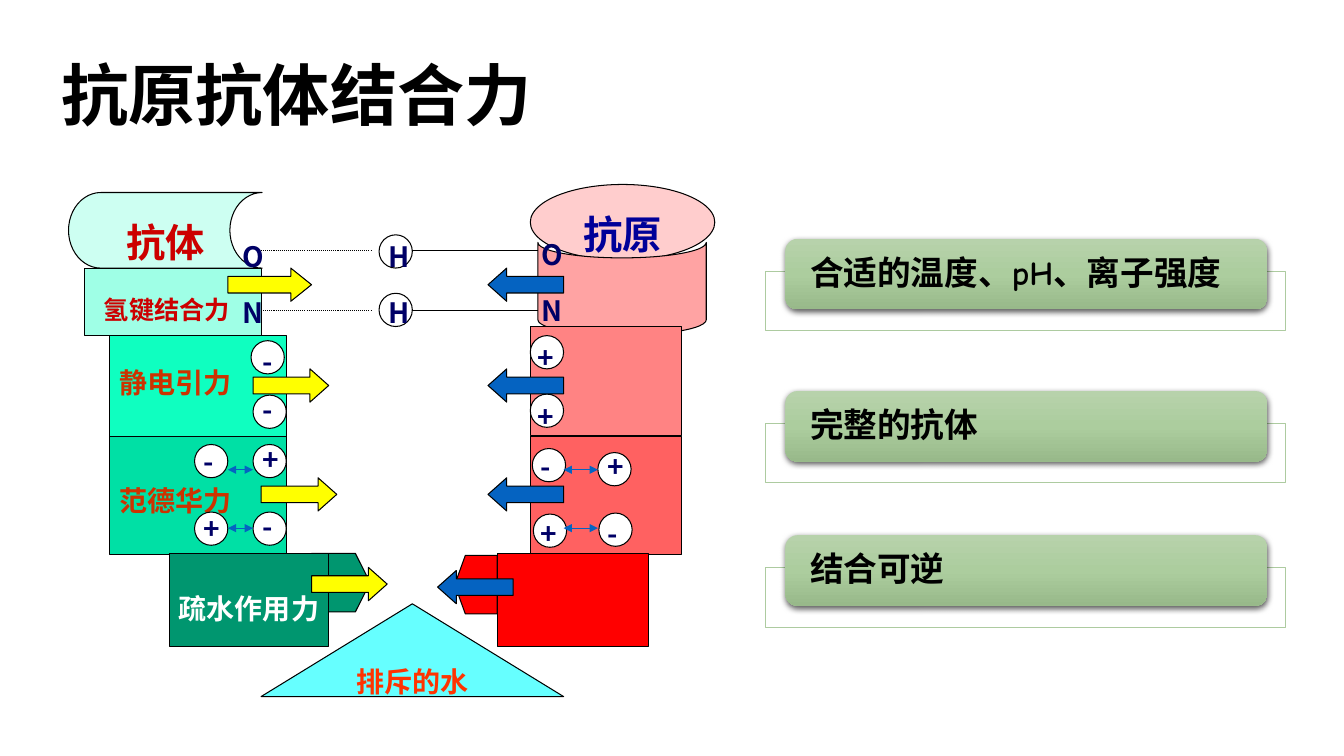
"""Build the slide on the binding forces between antigen and antibody."""
from dataclasses import dataclass

from pptx import Presentation
from pptx.dml.color import RGBColor
from pptx.enum.dml import MSO_LINE
from pptx.enum.shapes import MSO_CONNECTOR, MSO_SHAPE
from pptx.enum.text import MSO_ANCHOR, MSO_AUTO_SIZE, PP_ALIGN
from pptx.oxml import parse_xml
from pptx.oxml.ns import nsdecls, qn
from pptx.util import Emu, Pt


@dataclass(frozen=True)
class Theme:
    cjk: str = "Noto Sans CJK SC"
    title_font: str = "Arial"
    card_font: str = "Comic Neue"
    title_size: int = 48
    name_size: int = 28
    card_size: int = 24
    label_size: int = 20
    small_size: int = 18
    black: str = "000000"
    white: str = "FFFFFF"
    navy: str = "000066"
    blue_name: str = "000099"
    red_name: str = "CC0000"
    force: str = "CC3300"
    water_text: str = "FF3300"
    water: str = "66FFFF"
    yellow: str = "FFFF00"
    blue: str = "0563C1"
    antibody: tuple = ("CDFFF2", "9FFFE6", "0FFFC0", "00E0A5", "00966F")
    antigen: tuple = ("FFCDCD", "FFA3A3", "FF8383", "FF6161", "FF0000")
    card_edge: str = "ADCBA0"
    card_stops: tuple = ((0, "B7D2AB"), (50000, "ACCD9E"), (100000, "98B98A"))


THEME = Theme()
PX = 9144

deck = Presentation()
deck.slide_width, deck.slide_height = Emu(1333 * PX), Emu(750 * PX)
page = deck.slides.add_slide(deck.slide_layouts[6])


def add_block(kind, box, fill, adjust=(), turn=0):
    block = page.shapes.add_shape(kind, *(Emu(n * PX) for n in box))
    block.shadow.inherit = False
    block.rotation = turn
    for index, value in enumerate(adjust):
        block.adjustments[index] = value
    if fill:
        block.fill.solid()
        block.fill.fore_color.rgb = RGBColor.from_string(fill)
    else:
        block.fill.background()
    block.line.color.rgb = RGBColor.from_string(THEME.black)
    block.line.width = Pt(0.75)
    return block


def write(shape, lines, size, color, spacing=1.5, before=0.2, after=0,
          align=PP_ALIGN.LEFT, font=THEME.cjk, wrap=True):
    frame = shape.text_frame
    frame.word_wrap = wrap
    for index, line in enumerate(lines):
        para = frame.add_paragraph() if index else frame.paragraphs[0]
        para.alignment = align
        para.line_spacing = spacing
        para.space_before, para.space_after = Pt(before * size), Pt(after)
        span = para.add_run()
        span.text = line
        span.font.size, span.font.bold, span.font.name = Pt(size), True, font
        span.font.color.rgb = RGBColor.from_string(color)
        east = span.font._element.makeelement(qn("a:ea"), {"typeface": THEME.cjk})
        span.font._element.find(qn("a:latin")).addnext(east)


RECT, OVAL = MSO_SHAPE.RECTANGLE, MSO_SHAPE.OVAL
STORED = MSO_SHAPE.FLOWCHART_STORED_DATA
blocks = [
    (MSO_SHAPE.CHEVRON, (309, 549, 58, 58), THEME.antibody[4], (0.25,), 0, "", 0, ""),
    (RECT, (526, 433, 150, 117), THEME.antigen[3], (), 0, "", 0, ""),
    (RECT, (109, 433, 175, 117), THEME.antibody[3], (), 0, "", 0, ""),
    (RECT, (109, 333, 175, 100), THEME.antibody[2], (), 0, "", 0, ""),
    (OVAL, (526, 183, 183, 75), THEME.antigen[0], (), 0,
     "抗原", THEME.name_size, THEME.blue_name),
    (STORED, (68, 191, 192, 75), THEME.antibody[0], (), 0,
     "抗体", THEME.name_size, THEME.red_name),
    (RECT, (84, 266, 175, 67), THEME.antibody[1], (), 0,
     "氢键结合力", THEME.small_size, THEME.red_name),
    (STORED, (571, 203, 92, 167), THEME.antigen[1], (), 270, "", 0, ""),
    (RECT, (526, 324, 150, 108), THEME.antigen[2], (), 0, "", 0, ""),
    (RECT, (168, 549, 158, 92), THEME.antibody[4], (), 0,
     "疏水作用力", THEME.label_size, THEME.white),
    (RECT, (493, 549, 150, 92), THEME.antigen[4], (), 0, "", 0, ""),
    (MSO_SHAPE.PENTAGON, (451, 551, 42, 58), THEME.antigen[4], (0.25,), 180, "", 0, ""),
    (MSO_SHAPE.ISOSCELES_TRIANGLE, (259, 599, 300, 92), THEME.water, (0.5,), 0,
     "排斥的水", THEME.label_size, THEME.water_text),
]
for kind, box, fill, adjust, turn, text, size, color in blocks:
    block = add_block(kind, box, fill, adjust, turn)
    if text:
        block.text_frame.vertical_anchor = MSO_ANCHOR.MIDDLE
        write(block, [text], size, color, align=PP_ALIGN.CENTER, wrap=False)
    if text == "氢键结合力":
        block.text_frame.margin_right = Emu(22 * PX)

for text, top in (("静电引力", 341), ("范德华力", 458)):
    label = page.shapes.add_textbox(*(Emu(n * PX) for n in (109, top, 133, 55)))
    label.text_frame.auto_size = MSO_AUTO_SIZE.SHAPE_TO_FIT_TEXT
    write(label, [text], THEME.label_size, THEME.force)

circles = [(529, 510), (528, 445), (593, 449), (594, 509), (251, 508), (251, 441),
           (251, 392), (249, 338), (376, 291), (526, 391), (526, 333),
           (193, 441), (193, 508)]
for left, top in circles:
    add_block(OVAL, (left, top, 33, 33), THEME.white)
add_block(OVAL, (376, 233, 33, 33), None)

RIGHT, LEFT = MSO_SHAPE.RIGHT_ARROW, MSO_SHAPE.LEFT_ARROW
arrows = [(RIGHT, 226, 266, 83), (RIGHT, 251, 366, 75), (RIGHT, 259, 474, 75),
          (RIGHT, 309, 563, 75), (LEFT, 484, 266, 75), (LEFT, 484, 366, 75),
          (LEFT, 484, 474, 75), (LEFT, 434, 566, 75)]
for kind, left, top, width in arrows:
    add_block(kind, (left, top, width, 33),
              THEME.yellow if kind == RIGHT else THEME.blue, (0.5, width * 0.0075))

links = [(501, 426, 249, "plain"), (259, 368, 249, "dotted"), (259, 368, 308, "dotted"),
         (409, 534, 308, "plain"), (409, 534, 249, "plain"),
         (226, 251, 466, "arrow"), (226, 251, 524, "arrow"),
         (559, 593, 466, "arrow"), (559, 593, 524, "arrow")]
for start, end, height, style in links:
    link = page.shapes.add_connector(
        MSO_CONNECTOR.STRAIGHT, *(Emu(n * PX) for n in (start, height, end, height)))
    link.line.width = Pt(0.75)
    link.line.color.rgb = RGBColor.from_string(
        THEME.blue if style == "arrow" else THEME.black)
    if style == "dotted":
        link.line.dash_style = MSO_LINE.ROUND_DOT
    if style == "arrow":
        for tip in ("headEnd", "tailEnd"):
            link.line._get_or_add_ln().append(
                parse_xml(f'<a:{tip} {nsdecls("a")} type="triangle"/>'))
    link._element.spPr.append(parse_xml(f'<a:effectLst {nsdecls("a")}/>'))

symbols = [
    ((231, 216, 44, 112), "ON", 1.5, 0.2, 0, False),
    ((527, 214, 33, 112), "ON", 1.5, 0.2, 0, True),
    ((376, 216, 43, 112), "HH", 1.5, 0.2, 0, False),
    ((251, 324, 32, 99), "--", 1.4, 0, 0, False),
    ((523, 308, 34, 120), "++", 1.75, 0, 0, True),
    ((192, 436, 34, 110), "-+", 1, 0, 24, True),
    ((251, 434, 34, 110), "+-", 1, 0, 24, True),
    ((593, 441, 34, 110), "+-", 1, 0, 24, True),
    ((526, 441, 34, 110), "-+", 1, 0, 24, True),
]
for box, pair, spacing, before, after, wrap in symbols:
    symbol = page.shapes.add_textbox(*(Emu(n * PX) for n in box))
    symbol.text_frame.auto_size = MSO_AUTO_SIZE.SHAPE_TO_FIT_TEXT
    write(symbol, pair, THEME.label_size, THEME.navy, spacing, before, after, wrap=wrap)

title = page.shapes.add_textbox(*(Emu(n * PX) for n in (51, 9, 767, 167)))
title.text_frame.vertical_anchor = MSO_ANCHOR.MIDDLE
write(title, ["抗原抗体结合力"], THEME.title_size, THEME.black, 1, 0, font=THEME.title_font)

stops = "".join(f'<a:gs pos="{pos}"><a:srgbClr val="{color}"/></a:gs>'
                for pos, color in THEME.card_stops)
for text, top in (("合适的温度、pH、离子强度", 237), ("完整的抗体", 388), ("结合可逆", 531)):
    edge = add_block(RECT, (759, top + 32, 516, 59), THEME.white)
    edge.line.color.rgb = RGBColor.from_string(THEME.card_edge)
    edge.line.width = Pt(0.5)
    edge._element.spPr.find(qn("a:solidFill"))[0].append(
        parse_xml(f'<a:alpha {nsdecls("a")} val="90000"/>'))

    card = page.shapes.add_shape(
        MSO_SHAPE.ROUNDED_RECTANGLE, *(Emu(n * PX) for n in (779, top, 478, 70)))
    card.adjustments[0] = 0.17
    card._element.spPr.append(parse_xml(
        f'<a:gradFill {nsdecls("a")} rotWithShape="1"><a:gsLst>{stops}</a:gsLst>'
        '<a:lin ang="5400000" scaled="0"/></a:gradFill>'))
    card.line.fill.background()
    card._element.spPr.append(parse_xml(
        f'<a:effectLst {nsdecls("a")}><a:outerShdw blurRad="57150" dist="19050" '
        f'dir="5400000" algn="ctr" rotWithShape="0"><a:srgbClr val="{THEME.black}">'
        '<a:alpha val="63000"/></a:srgbClr></a:outerShdw></a:effectLst>'))
    card.text_frame.margin_left = card.text_frame.margin_right = Emu(21 * PX)
    card.text_frame.vertical_anchor = MSO_ANCHOR.MIDDLE
    write(card, [text], THEME.card_size, THEME.black, 0.9, 0, 8, font=THEME.card_font)

deck.save("out.pptx")
